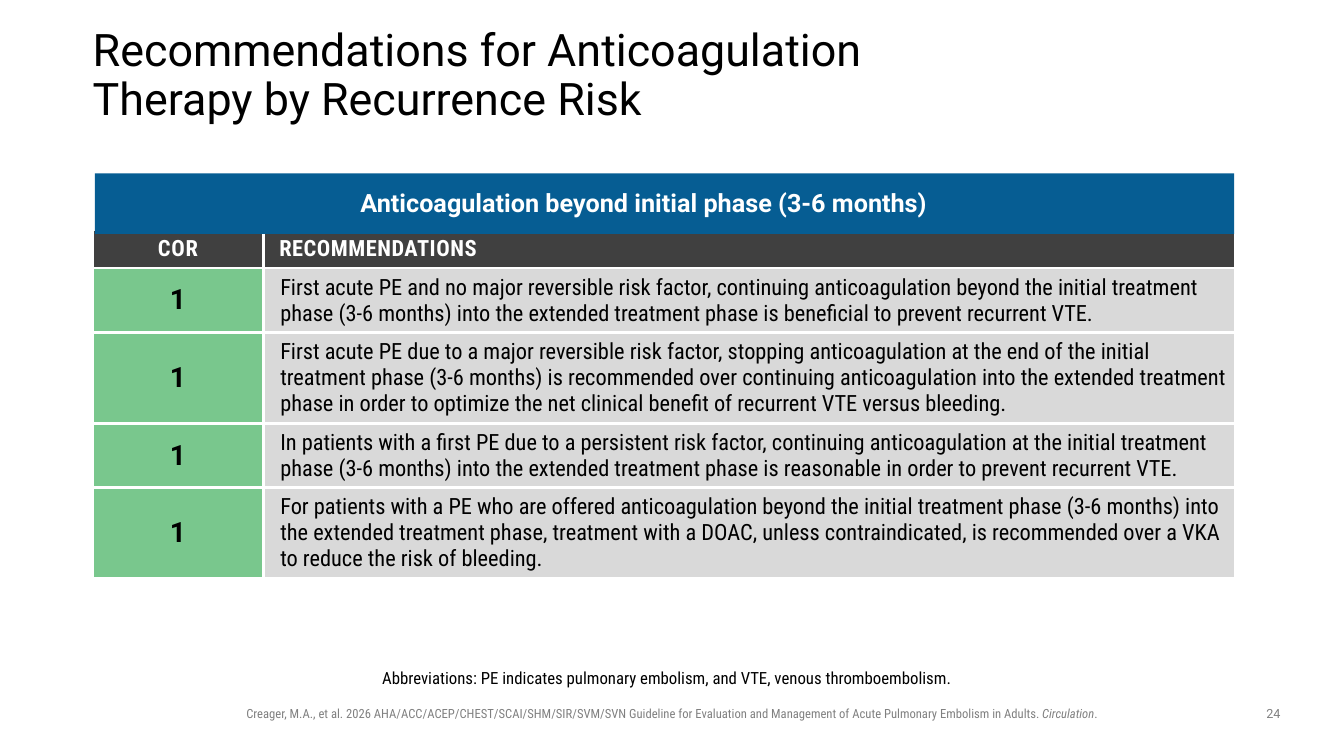
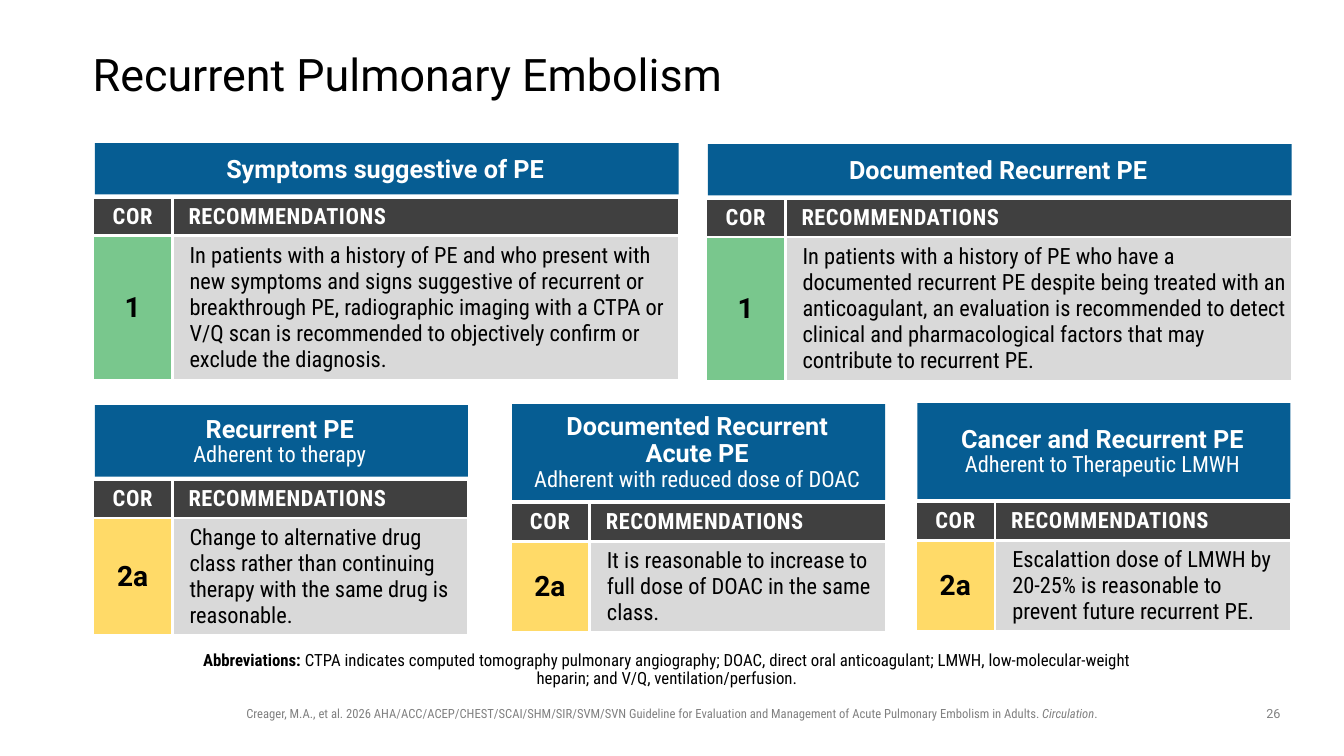
from dataclasses import dataclass

from lxml.etree import SubElement
from pptx import Presentation
from pptx.dml.color import RGBColor
from pptx.enum.shapes import MSO_SHAPE
from pptx.enum.text import MSO_ANCHOR, PP_ALIGN
from pptx.oxml.ns import qn
from pptx.util import Emu, Pt

EMU_PER_PX = 9144  # 100 px to the inch


def px(length):
    return Emu(length * EMU_PER_PX)


@dataclass(frozen=True)
class Style:
    size: int
    font: str
    color: str
    bold: bool = False
    italic: bool = False
    tracking: int = 0  # hundredths of a point


class Theme:
    BAND = "065D93"
    HEADER = "404040"
    BODY = "D9D9D9"
    BORDER = "FFFFFF"
    BORDER_WIDTH = Pt(2.25)
    CLASS_FILL = {"1": "79C78D", "2a": "FFDA68"}
    LINE_SPACING = 0.9

    TITLE = Style(32, "Roboto", "000000")
    HEADING = Style(18, "Roboto", "FFFFFF", bold=True)
    SUBHEADING = Style(16, "Roboto Condensed", "FFFFFF")
    COR_HEADER = Style(16, "Roboto Condensed", "FFFFFF", bold=True, tracking=50)
    TEXT_HEADER = Style(16, "Roboto Condensed", "FFFFFF", bold=True, tracking=40)
    COR = Style(20, "Roboto", "000000", bold=True)
    TEXT = Style(16, "Roboto Condensed", "000000")
    NOTE = Style(12, "Roboto Condensed", "000000")
    NOTE_LABEL = Style(12, "Roboto Condensed", "000000", bold=True)
    CITATION = Style(9, "Roboto Condensed", "808080")
    JOURNAL = Style(9, "Roboto Condensed", "808080", italic=True)
    NUMBER = Style(9, "Roboto", "808080")


SLIDE_SIZE = (1333, 750)
TITLE_ORIGIN = (92, 40)
TITLE_HEIGHT = 72
NOTE_BOX = (188, 642, 957, 46)
CITATION_BOX = (223, 695, 887, 25)
NUMBER_BOX = (1242, 695, 42, 26)
HEADER_HEIGHT = 38
CELL_INSET = 5
DEFAULT_INSETS = (10, 5, 10, 5)

CITATION = [
    ("Creager, M.A., et al. 2026 AHA/ACC/ACEP/CHEST/SCAI/SHM/SIR/SVM/SVN Guideline for "
     "Evaluation and Management of Acute Pulmonary Embolism in Adults. ", Theme.CITATION),
    ("Circulation", Theme.JOURNAL),
    (".", Theme.CITATION),
]


@dataclass(frozen=True)
class Panel:
    """A blue heading band over a table of (class, recommendation, row height)."""
    left: int
    top: int
    width: int
    band_height: int
    headings: list
    rows: list
    subheading: str = ""
    cor_width: int = 79
    gap: int = 3
    heading_inset: int = 3


WIDE, NARROW = 582, 373

SLIDES = [
    {
        "title": "Recommendations for Anticoagulation Therapy by Recurrence Risk",
        "title_width": 854,
        "number": "24",
        "note": [("Abbreviations: PE indicates pulmonary embolism, and VTE, venous "
                  "thromboembolism.", Theme.NOTE)],
        "panels": [
            Panel(92, 172, 1133, 60, ["Anticoagulation beyond initial phase (3-6 months)"], [
                ("1", "First acute PE and no major reversible risk factor, continuing "
                      "anticoagulation beyond the initial treatment phase (3-6 months) into the "
                      "extended treatment phase is beneficial to prevent recurrent VTE.", 64),
                ("1", "First acute PE due to a major reversible risk factor, stopping "
                      "anticoagulation at the end of the initial treatment phase (3-6 months) is "
                      "recommended over continuing anticoagulation into the extended treatment "
                      "phase in order to optimize the net clinical benefit of recurrent VTE "
                      "versus bleeding.", 90),
                ("1", "In patients with a first PE due to a persistent risk factor, continuing "
                      "anticoagulation at the initial treatment phase (3-6 months) into the "
                      "extended treatment phase is reasonable in order to prevent recurrent "
                      "VTE.", 64),
                ("1", "For patients with a PE who are offered anticoagulation beyond the initial "
                      "treatment phase (3-6 months) into the extended treatment phase, treatment "
                      "with a DOAC, unless contraindicated, is recommended over a VKA to reduce "
                      "the risk of bleeding.", 90),
            ], cor_width=169, gap=-4, heading_inset=41),
        ],
    },
    {
        "title": "Recurrent Pulmonary Embolism",
        "title_width": 1150,
        "number": "26",
        "note": [
            ("Abbreviations: ", Theme.NOTE_LABEL),
            ("CTPA indicates computed tomography pulmonary angiography; DOAC, direct oral "
             "anticoagulant; LMWH, low-molecular-weight heparin; and V/Q, "
             "ventilation/perfusion.", Theme.NOTE),
        ],
        "panels": [
            Panel(92, 142, WIDE, 51, ["Symptoms suggestive of PE"], [
                ("1", "In patients with a history of PE and who present with new symptoms and "
                      "signs suggestive of recurrent or breakthrough PE, radiographic imaging "
                      "with a CTPA or V/Q scan is recommended to objectively confirm or exclude "
                      "the diagnosis.", 138)]),
            Panel(700, 143, WIDE, 51, ["Documented Recurrent PE"], [
                ("1", "In patients with a history of PE who have a documented recurrent PE "
                      "despite being treated with an anticoagulant, an evaluation is recommended "
                      "to detect clinical and pharmacological factors that may contribute to "
                      "recurrent PE.", 138)]),
            Panel(92, 402, NARROW, 71, ["Recurrent PE"], [
                ("2a", "Change to alternative drug class rather than continuing therapy with the "
                       "same drug is reasonable.", 112)],
                subheading="Adherent to therapy"),
            Panel(506, 401, NARROW, 95, ["Documented Recurrent", "Acute PE"], [
                ("2a", "It is reasonable to increase to full dose of DOAC in the same class.", 86)],
                subheading="Adherent with reduced dose of DOAC"),
            Panel(908, 400, NARROW, 95, ["Cancer and Recurrent PE"], [
                ("2a", "Escalattion dose of LMWH by 20-25% is reasonable to prevent future "
                       "recurrent PE.", 86)],
                subheading="Adherent to Therapeutic LMWH"),
        ],
    },
]


def write(frame, paragraphs, align=PP_ALIGN.LEFT, spacing=None):
    """Fill a text frame from lists of (text, style) spans, one list a paragraph."""
    for index, spans in enumerate(paragraphs):
        para = frame.add_paragraph() if index else frame.paragraphs[0]
        para.alignment = align
        if spacing:
            para.line_spacing = spacing
        for text, style in spans:
            span = para.add_run()
            span.text = text
            font = span.font
            font.size, font.name = Pt(style.size), style.font
            font.bold, font.italic = style.bold, style.italic
            font.color.rgb = RGBColor.from_string(style.color)
            if style.tracking:
                font._element.set("spc", str(style.tracking))


def set_frame(frame, anchor, insets):
    frame.word_wrap = True
    frame.vertical_anchor = anchor
    (frame.margin_left, frame.margin_top,
     frame.margin_right, frame.margin_bottom) = map(px, insets)


def add_text(page, place, spans, align=PP_ALIGN.CENTER, anchor=MSO_ANCHOR.TOP,
             insets=DEFAULT_INSETS, spacing=None):
    box = page.shapes.add_textbox(*map(px, place))
    set_frame(box.text_frame, anchor, insets)
    write(box.text_frame, [spans], align, spacing)


def add_borders(cell):
    properties = cell._tc.get_or_add_tcPr()
    for position, side in enumerate(("lnL", "lnR", "lnT", "lnB")):
        line = SubElement(properties, qn(f"a:{side}"), w=str(Theme.BORDER_WIDTH))
        fill = SubElement(line, qn("a:solidFill"))
        SubElement(fill, qn("a:srgbClr"), val=Theme.BORDER)
        properties.insert(position, line)  # borders come before the fill


def set_cell(cell, text, style, fill, align=PP_ALIGN.LEFT, inset=None, indent=0):
    cell.fill.solid()
    cell.fill.fore_color.rgb = RGBColor.from_string(fill)
    add_borders(cell)
    cell.vertical_anchor = MSO_ANCHOR.MIDDLE
    if inset is not None:
        cell.margin_left = cell.margin_right = px(inset)
        cell.margin_top = cell.margin_bottom = px(inset)
    write(cell.text_frame, [[(text, style)]], align)
    if indent:
        properties = cell.text_frame.paragraphs[0]._p.get_or_add_pPr()
        properties.set("marL", str(px(indent)))
        properties.set("indent", "0")


def add_recommendations(page, panel):
    heights = [HEADER_HEIGHT] + [height for _, _, height in panel.rows]
    top = panel.top + panel.band_height + panel.gap
    place = (panel.left, top, panel.width, sum(heights))
    table = page.shapes.add_table(len(heights), 2, *map(px, place)).table
    table.first_row = table.horz_banding = False
    for column, width in zip(table.columns, (panel.cor_width, panel.width - panel.cor_width)):
        column.width = px(width)
    for row, height in zip(table.rows, heights):
        row.height = px(height)

    set_cell(table.cell(0, 0), "COR", Theme.COR_HEADER, Theme.HEADER, PP_ALIGN.CENTER)
    set_cell(table.cell(0, 1), "RECOMMENDATIONS", Theme.TEXT_HEADER, Theme.HEADER, indent=6)
    for index, (cor, text, _) in enumerate(panel.rows, start=1):
        set_cell(table.cell(index, 0), cor, Theme.COR, Theme.CLASS_FILL[cor],
                 PP_ALIGN.CENTER, CELL_INSET)
        set_cell(table.cell(index, 1), text, Theme.TEXT, Theme.BODY,
                 inset=CELL_INSET, indent=12)


def add_band(page, panel):
    place = (panel.left + 2, panel.top, panel.width - 3, panel.band_height)
    band = page.shapes.add_shape(MSO_SHAPE.RECTANGLE, *map(px, place))
    band.shadow.inherit = False
    band.fill.solid()
    band.fill.fore_color.rgb = RGBColor.from_string(Theme.BAND)
    band.line.fill.background()
    lines = [[(heading, Theme.HEADING)] for heading in panel.headings]
    if panel.subheading:
        lines.append([(panel.subheading, Theme.SUBHEADING)])
    set_frame(band.text_frame, MSO_ANCHOR.MIDDLE, (0, 2, panel.heading_inset, 0))
    write(band.text_frame, lines, PP_ALIGN.CENTER, Theme.LINE_SPACING)


def add_page(deck, content):
    page = deck.slides.add_slide(deck.slide_layouts[6])
    add_text(page, (*TITLE_ORIGIN, content["title_width"], TITLE_HEIGHT),
             [(content["title"], Theme.TITLE)], PP_ALIGN.LEFT, MSO_ANCHOR.MIDDLE,
             (0, 0, 0, 0), Theme.LINE_SPACING)
    for panel in content["panels"]:
        add_recommendations(page, panel)
        add_band(page, panel)
    add_text(page, NOTE_BOX, content["note"], anchor=MSO_ANCHOR.BOTTOM,
             insets=(0, 5, 10, 5), spacing=Theme.LINE_SPACING)
    add_text(page, CITATION_BOX, CITATION)
    add_text(page, NUMBER_BOX, [(content["number"], Theme.NUMBER)])


def main():
    deck = Presentation()
    deck.slide_width, deck.slide_height = map(px, SLIDE_SIZE)
    for content in SLIDES:
        add_page(deck, content)
    deck.save("out.pptx")


if __name__ == "__main__":
    main()
